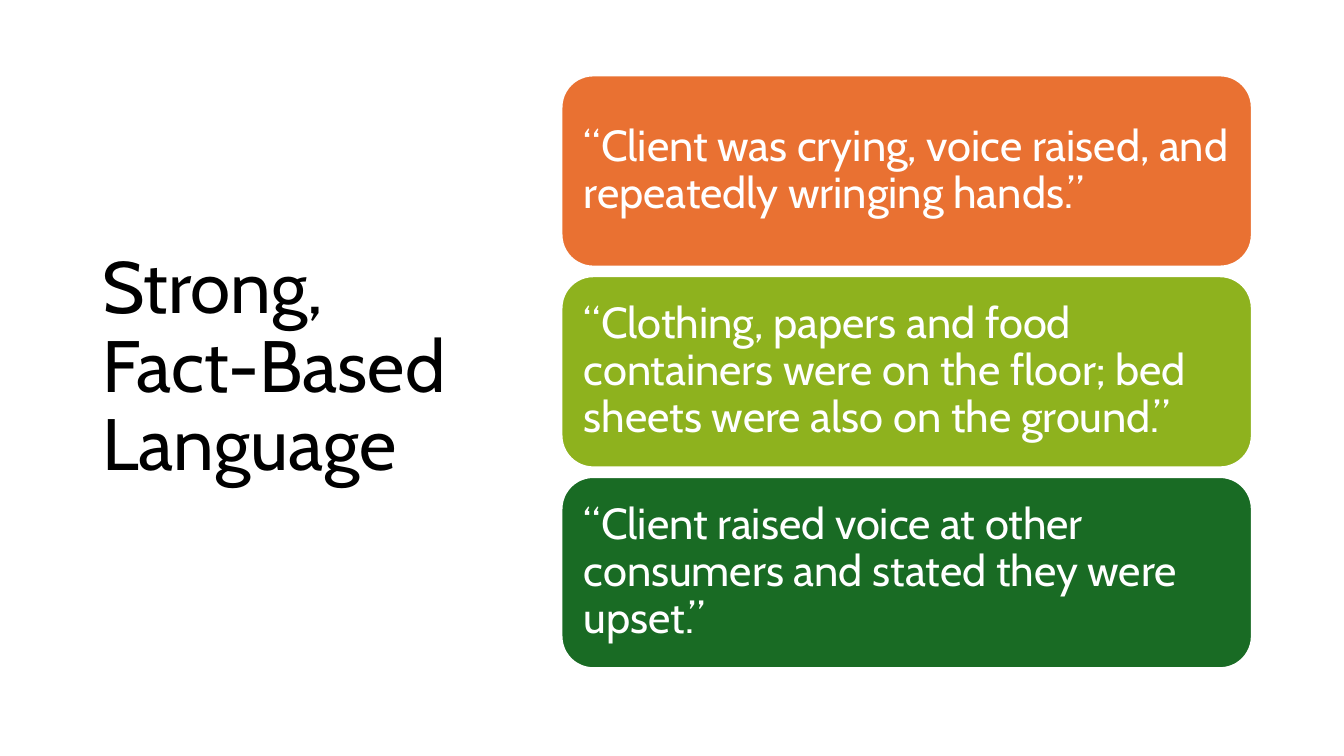
"""Build the slide on strong, fact-based language with three example quotes."""

from dataclasses import dataclass

from pptx import Presentation
from pptx.dml.color import RGBColor
from pptx.enum.shapes import MSO_SHAPE
from pptx.enum.text import MSO_ANCHOR, PP_ALIGN
from pptx.slide import Slide
from pptx.text.text import TextFrame
from pptx.util import Cm, Pt


@dataclass(frozen=True)
class Theme:
    """Colours, font and type sizes of the slide."""

    font: str = "Cabin"
    black: str = "000000"
    white: str = "FFFFFF"
    orange: str = "E97132"
    lime: str = "8EB21E"
    green: str = "196B24"
    title_size: float = 52
    quote_size: float = 31
    outline: float = 1.5
    line_spacing: float = 0.9


@dataclass(frozen=True)
class Quote:
    """One example quote and the colour of its card."""

    words: str
    colour: str


THEME = Theme()
TITLE = "Strong, Fact-Based Language"
QUOTES = [
    Quote("“Client was crying, voice raised, and repeatedly wringing hands.”", THEME.orange),
    Quote(
        "“Clothing, papers and food containers were on the floor; "
        "bed sheets were also on the ground.”",
        THEME.lime,
    ),
    Quote("“Client raised voice at other consumers and stated they were upset.”", THEME.green),
]
CARD_LEFT, CARD_TOP = 14.15, 1.9
CARD_WIDTH, CARD_HEIGHT = 17.4, 4.82
CARD_PITCH = 5.06
CARD_INSET = 0.33


def write(frame: TextFrame, words: str, size: float, colour: str) -> None:
    """Set one left-aligned, vertically centred paragraph in a frame."""
    frame.word_wrap = True
    frame.vertical_anchor = MSO_ANCHOR.MIDDLE
    paragraph = frame.paragraphs[0]
    paragraph.alignment = PP_ALIGN.LEFT
    paragraph.line_spacing = THEME.line_spacing
    run = paragraph.add_run()
    run.text = words
    run.font.name = THEME.font
    run.font.size = Pt(size)
    run.font.color.rgb = RGBColor.from_string(colour)


def add_title(slide: Slide) -> None:
    """Add the slide title on the left."""
    title = slide.shapes.add_textbox(Cm(2.33), Cm(1.55), Cm(9.37), Cm(15.47))
    write(title.text_frame, TITLE, THEME.title_size, THEME.black)


def add_card(slide: Slide, quote: Quote, top: float) -> None:
    """Add a rounded card holding one quote."""
    card = slide.shapes.add_shape(
        MSO_SHAPE.ROUNDED_RECTANGLE,
        Cm(CARD_LEFT), Cm(top), Cm(CARD_WIDTH), Cm(CARD_HEIGHT),
    )
    card.shadow.inherit = False
    card.fill.solid()
    card.fill.fore_color.rgb = RGBColor.from_string(quote.colour)
    card.line.color.rgb = RGBColor.from_string(THEME.white)
    card.line.width = Pt(THEME.outline)
    frame = card.text_frame
    frame.margin_left = frame.margin_right = Cm(CARD_INSET)
    frame.margin_top = frame.margin_bottom = Cm(CARD_INSET)
    write(frame, quote.words, THEME.quote_size, THEME.white)


def main() -> None:
    """Create the presentation and save it."""
    presentation = Presentation()
    presentation.slide_width = Cm(33.87)
    presentation.slide_height = Cm(19.05)
    slide = presentation.slides.add_slide(presentation.slide_layouts[6])
    add_title(slide)
    for row, quote in enumerate(QUOTES):
        add_card(slide, quote, CARD_TOP + row * CARD_PITCH)
    presentation.save("out.pptx")


if __name__ == "__main__":
    main()
